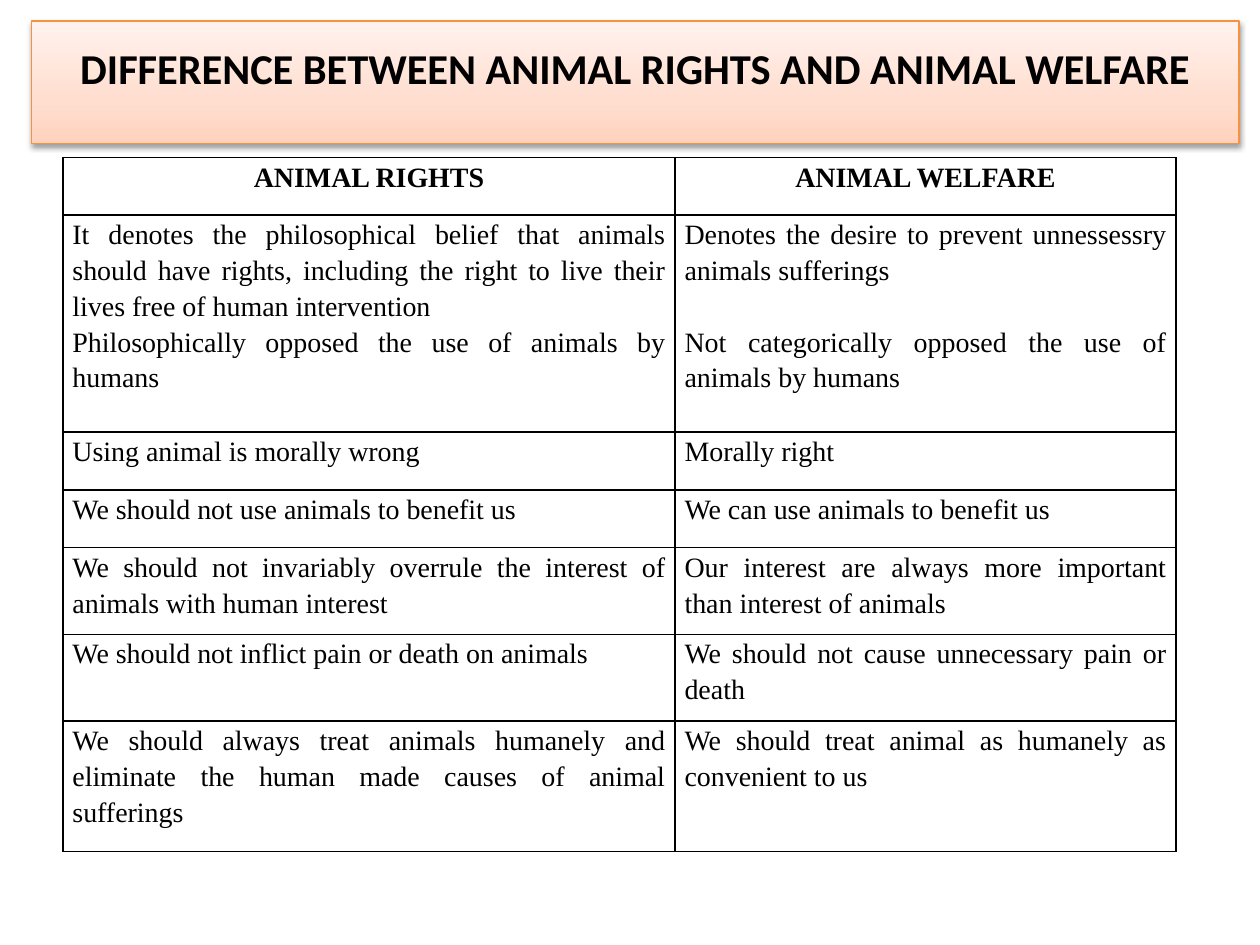
from lxml.etree import SubElement
from copy import deepcopy
from pptx import Presentation
from pptx.dml.color import RGBColor
from pptx.enum.text import MSO_ANCHOR, PP_ALIGN
from pptx.oxml import parse_xml
from pptx.oxml.ns import nsdecls, qn
from pptx.util import Pt

BLACK = RGBColor(0x00, 0x00, 0x00)
ORANGE = RGBColor(0xF6, 0x92, 0x40)
PEACH = [
    (0, RGBColor(0xFF, 0xD2, 0xBD)),
    (0.35, RGBColor(0xFF, 0xDE, 0xD0)),
    (1, RGBColor(0xFF, 0xF2, 0xED)),
]
LINE_PITCH = 20.4
COL_WIDTHS = [349.8, 286.2]
ROW_HEIGHTS = [33, 124, 33, 33, 49.5, 49.5, 74.5]
ROWS = [
    (["ANIMAL RIGHTS"], ["ANIMAL WELFARE"]),
    (["It denotes the philosophical belief that animals should have rights, "
      "including the right to live their lives free of human intervention",
      "Philosophically opposed the use of animals by humans"],
     ["Denotes the desire to prevent unnessessry animals sufferings",
      "Not categorically opposed the use of animals by humans"]),
    (["Using animal is morally wrong"], ["Morally right"]),
    (["We should not use animals to benefit us"],
     ["We can use animals to benefit us"]),
    (["We should not invariably overrule the interest of animals with human interest"],
     ["Our interest are always more important than interest of animals"]),
    (["We should not inflict pain or death on animals"],
     ["We should not cause unnecessary pain or death"]),
    (["We should always treat animals humanely and eliminate the human made "
      "causes of animal sufferings"],
     ["We should treat animal as humanely as convenient to us"]),
]


def write(p, text, size=16, font="Times New Roman", bold=False,
          align=PP_ALIGN.JUSTIFY, spacing=1.15, before=0):
    p.alignment = align
    p.line_spacing = spacing
    p.space_before = Pt(before)
    r = p.add_run()
    r.text = text
    r.font.size = Pt(size)
    r.font.name = font
    r.font.bold = bold
    r.font.color.rgb = BLACK


prs = Presentation()
prs.slide_width, prs.slide_height = Pt(720), Pt(540)
slide = prs.slides.add_slide(prs.slide_layouts[5])

sp = slide.shapes.title
sp.left, sp.top, sp.width, sp.height = Pt(18), Pt(12), Pt(690), Pt(70)
sp.fill.gradient()
sp.fill.gradient_angle = 90
stops = sp._element.spPr.find(".//" + qn("a:gsLst"))
stops.insert(1, deepcopy(stops[0]))
for stop, (position, color) in zip(sp.fill.gradient_stops, PEACH):
    stop.position = position
    stop.color.rgb = color
sp.line.color.rgb = ORANGE
sp.line.width = Pt(0.75)
sp._element.spPr.append(parse_xml(
    f'<a:effectLst {nsdecls("a")}>'
    f'<a:outerShdw blurRad="{Pt(3.1)}" dist="{Pt(1.6)}" dir="5400000" rotWithShape="0">'
    '<a:srgbClr val="000000"><a:alpha val="38000"/></a:srgbClr>'
    '</a:outerShdw></a:effectLst>'))
tf = sp.text_frame
tf.word_wrap = True
tf.vertical_anchor = MSO_ANCHOR.MIDDLE
tf.margin_top, tf.margin_bottom = Pt(3.6), Pt(20)
write(tf.paragraphs[0], "DIFFERENCE BETWEEN ANIMAL RIGHTS AND ANIMAL WELFARE",
      size=24.3, font="Calibri", bold=True, align=PP_ALIGN.CENTER, spacing=1.0)

table = slide.shapes.add_table(len(ROWS), len(COL_WIDTHS), Pt(36), Pt(90),
                               Pt(sum(COL_WIDTHS)), Pt(sum(ROW_HEIGHTS))).table
table.horz_banding = False
for column, width in zip(table.columns, COL_WIDTHS):
    column.width = Pt(width)
for row, height in zip(table.rows, ROW_HEIGHTS):
    row.height = Pt(height)

for i, texts in enumerate(ROWS):
    for j, paragraphs in enumerate(texts):
        cell = table.cell(i, j)
        cell.margin_left = cell.margin_right = Pt(5.4)
        cell.margin_top = cell.margin_bottom = Pt(0)
        tcPr = cell._tc.get_or_add_tcPr()
        for side in ("a:lnL", "a:lnR", "a:lnT", "a:lnB"):
            ln = SubElement(tcPr, qn(side), w=str(Pt(1)))
            solid = SubElement(ln, qn("a:solidFill"))
            SubElement(solid, qn("a:srgbClr"), val=str(BLACK))
        cell.fill.background()
        tf = cell.text_frame
        for k, text in enumerate(paragraphs):
            p = tf.add_paragraph() if k else tf.paragraphs[0]
            write(p, text, bold=i == 0,
                  align=PP_ALIGN.JUSTIFY if i else PP_ALIGN.CENTER,
                  before=LINE_PITCH if j and k else 0)

prs.save("out.pptx")
